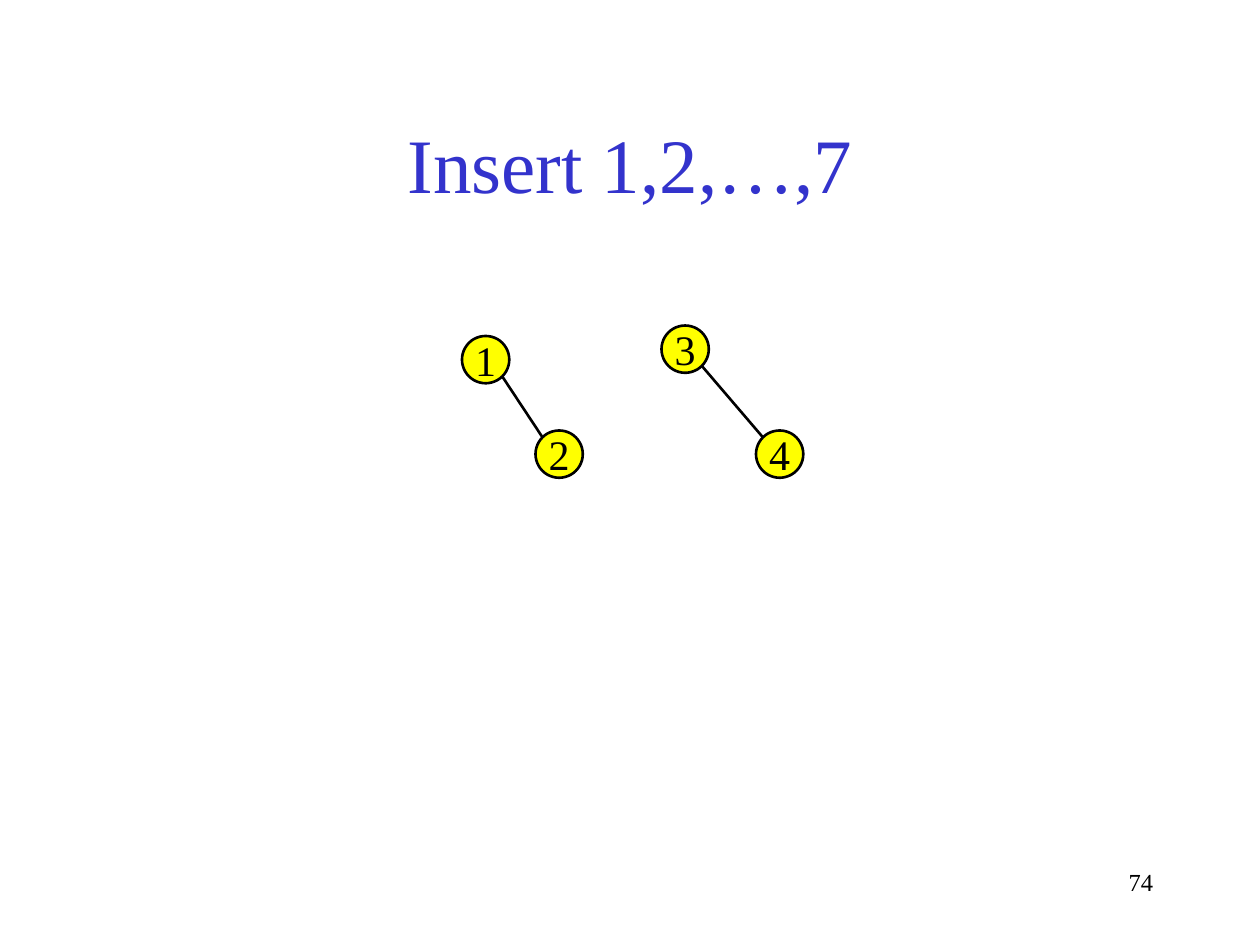
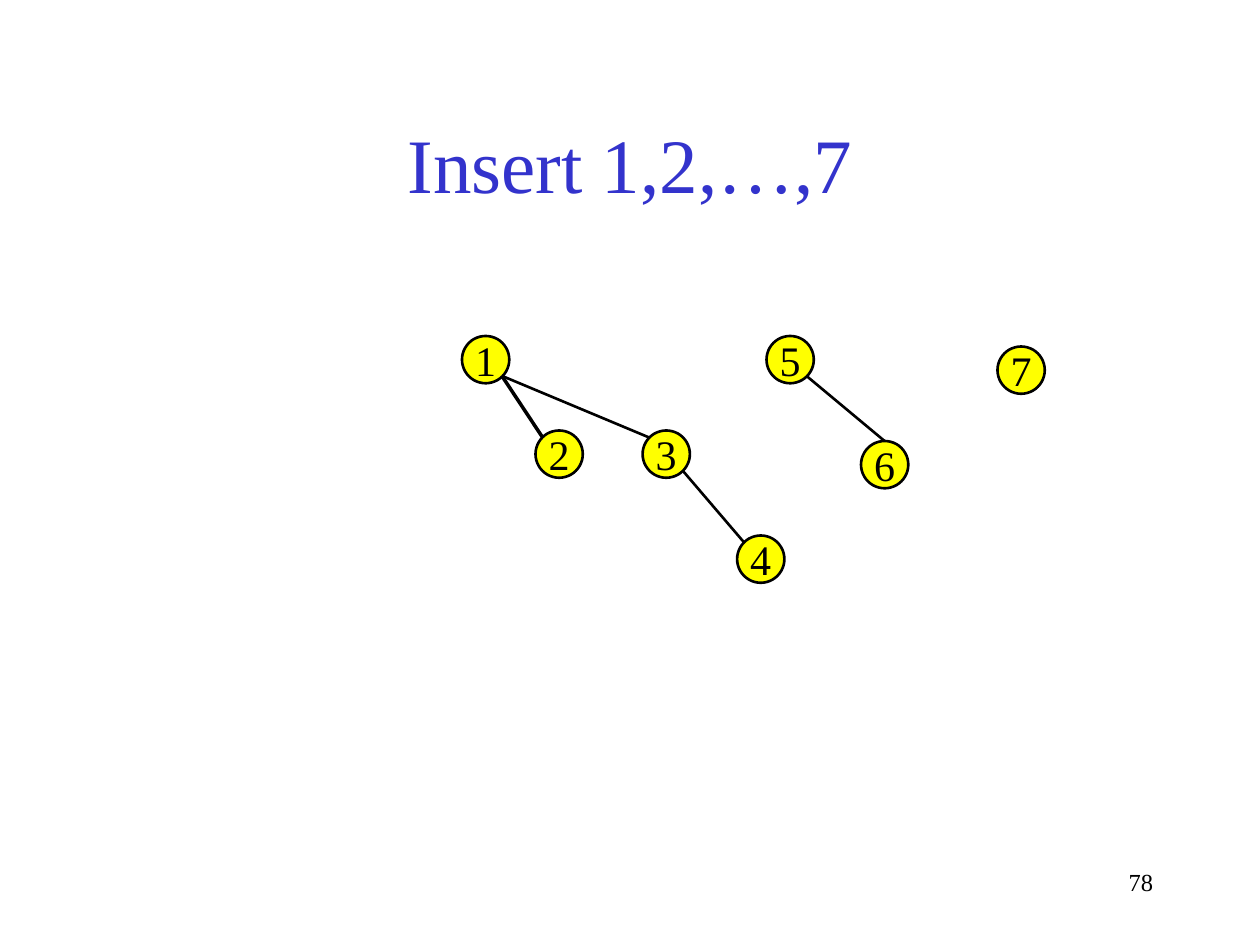
"""Build two slides that show a forest of binomial trees during insertion."""
from math import sqrt

from lxml.etree import SubElement
from pptx import Presentation
from pptx.dml.color import RGBColor
from pptx.enum.shapes import MSO_CONNECTOR, MSO_SHAPE
from pptx.enum.text import MSO_ANCHOR, PP_ALIGN
from pptx.oxml.ns import qn
from pptx.util import Emu, Pt

EMU_PER_PX = 7620
BLACK = RGBColor(0x00, 0x00, 0x00)
YELLOW = RGBColor(0xFF, 0xFF, 0x00)
TITLE_BLUE = RGBColor(0x33, 0x33, 0xCC)
FONT = "Times New Roman"
TITLE = "Insert 1,2,…,7"
NODE_SIZE = 45
NEAR_CORNER = round(NODE_SIZE / 2 * (1 - 1 / sqrt(2)))
FAR_CORNER = NODE_SIZE - NEAR_CORNER
TOP = 0
THIN, THICK = 1.5, 2

FIRST_NODES = {1: (440, 320), 2: (510, 410), 3: (630, 310), 4: (720, 410)}
FIRST_EDGES = [(1, 2, THIN), (3, 4, THIN)]
SECOND_NODES = {1: (440, 320), 2: (510, 410), 3: (612, 410), 4: (702, 510),
                5: (730, 320), 6: (820, 420), 7: (950, 330)}
SECOND_EDGES = [(1, 2, THICK), (3, 4, THIN), (1, 3, THIN)]


def px(length):
    return Emu(length * EMU_PER_PX)


def write_text(shape, text, size, color, alignment, anchor, wrap=True):
    frame = shape.text_frame
    frame.word_wrap = wrap
    frame.vertical_anchor = anchor
    paragraph = frame.paragraphs[0]
    paragraph.text = text
    paragraph.alignment = alignment
    paragraph.font.name = FONT
    paragraph.font.size = Pt(size)
    paragraph.font.color.rgb = color


def add_text(slide, box, *style):
    write_text(slide.shapes.add_textbox(*map(px, box)), *style)


def add_node(slide, key, position):
    left, top = position
    node = slide.shapes.add_shape(
        MSO_SHAPE.OVAL, px(left), px(top), px(NODE_SIZE), px(NODE_SIZE))
    node.shadow.inherit = False
    node.fill.solid()
    node.fill.fore_color.rgb = YELLOW
    node.line.color.rgb = BLACK
    node.line.width = Pt(THIN)
    write_text(node, str(key), 24, BLACK, PP_ALIGN.CENTER,
               MSO_ANCHOR.MIDDLE, wrap=False)
    return node


def add_edge(slide, parent, child, width=THIN):
    far, near = px(FAR_CORNER), px(NEAR_CORNER)
    edge = slide.shapes.add_connector(
        MSO_CONNECTOR.STRAIGHT, parent.left + far, parent.top + far,
        child.left + near, child.top + near)
    edge.line.color.rgb = BLACK
    edge.line.width = Pt(width)
    SubElement(edge._element.spPr, qn("a:effectLst"))
    return edge


def add_forest_slide(presentation, number, positions, edges):
    slide = presentation.slides.add_slide(presentation.slide_layouts[6])
    add_text(slide, (860, 820, 250, 60), str(number), 14, BLACK,
             PP_ALIGN.RIGHT, MSO_ANCHOR.TOP)
    add_text(slide, (90, 80, 1020, 150), TITLE, 44, TITLE_BLUE,
             PP_ALIGN.CENTER, MSO_ANCHOR.MIDDLE)
    nodes = {key: add_node(slide, key, position)
             for key, position in positions.items()}
    for parent, child, width in edges:
        add_edge(slide, nodes[parent], nodes[child], width)
    return slide, nodes


def main():
    presentation = Presentation()
    presentation.slide_width = px(1200)
    presentation.slide_height = px(900)
    add_forest_slide(presentation, 74, FIRST_NODES, FIRST_EDGES)
    slide, nodes = add_forest_slide(presentation, 78, SECOND_NODES, SECOND_EDGES)
    add_edge(slide, nodes[5], nodes[6]).end_connect(nodes[6], TOP)
    presentation.save("out.pptx")


if __name__ == "__main__":
    main()
